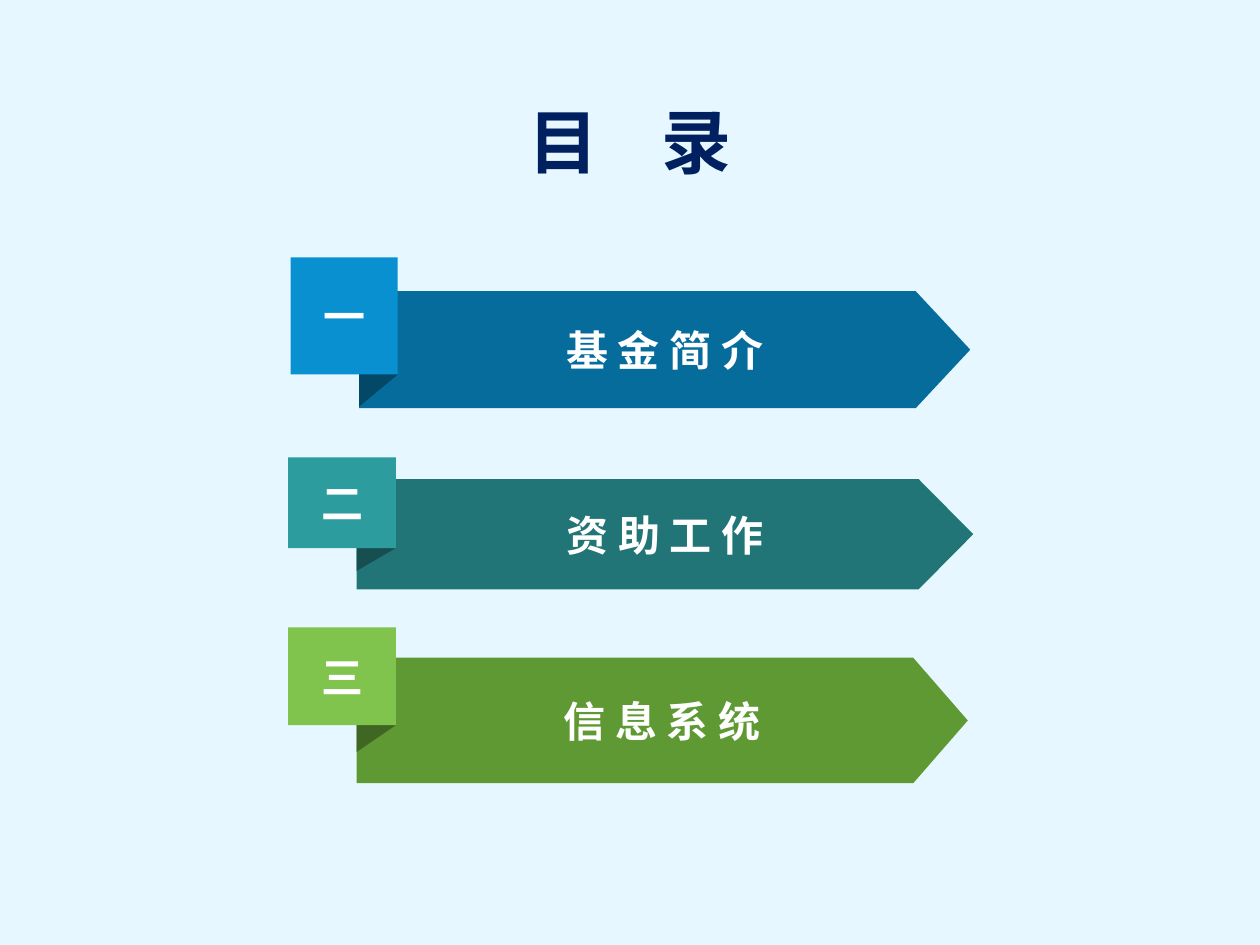
from dataclasses import dataclass

from lxml import etree
from pptx import Presentation
from pptx import util as u
from pptx.dml.color import RGBColor
from pptx.enum import shapes, text
from pptx.oxml.ns import qn


@dataclass(frozen=True)
class Theme:
    font: str = "Noto Sans CJK SC"
    back: str = "E6F7FF"
    title: str = "002060"
    label: str = "FFFFFF"
    big: int = 40
    mid: int = 24
    gap: int = 1350


class Deck:
    def __init__(self, theme):
        self.theme = theme
        self.file = Presentation()
        self.file.slide_width = u.Cm(25.4)
        self.file.slide_height = u.Cm(19.05)
        self.slide = self.file.slides.add_slide(self.file.slide_layouts[6])
        self.paint(self.slide.background.fill, theme.back)

    def paint(self, fill, color):
        fill.solid()
        fill.fore_color.rgb = RGBColor.from_string(color)

    def plain(self, shape, color):
        self.paint(shape.fill, color)
        shape.line.fill.background()
        shape.shadow.inherit = False

    def style(self, para, size, color):
        para.alignment = text.PP_ALIGN.CENTER
        for run in para.runs:
            run.font.name = self.theme.font
            run.font.size = u.Pt(size)
            run.font.bold = True
            run.font.color.rgb = RGBColor.from_string(color)
            east = etree.SubElement(run.font._element, qn("a:ea"))
            east.set("typeface", self.theme.font)

    def label(self, shape, words):
        frame = shape.text_frame
        frame.text = words
        frame.word_wrap = True
        frame.vertical_anchor = text.MSO_ANCHOR.MIDDLE
        self.style(frame.paragraphs[0], self.theme.mid, self.theme.label)

    def title(self, first, last):
        box = self.slide.shapes.add_textbox(0, u.Cm(2.06), u.Cm(25.4), u.Cm(2.16))
        box.text_frame.word_wrap = True
        para = box.text_frame.paragraphs[0]
        para.text = first + " "
        para.add_run().text = last
        para.line_spacing = 0.9
        self.style(para, self.theme.big, self.theme.title)
        para.runs[0].font._element.set("spc", str(self.theme.gap))

    def outline(self, group, points, color):
        start, *rest = [(u.Cm(x), u.Cm(y)) for x, y in points]
        pen = group.shapes.build_freeform(*start)
        pen.add_line_segments(rest)
        shape = pen.convert_to_shape()
        self.plain(shape, color)
        return shape

    def bar(self, group, box, color, words):
        left, top, width, height = box
        right, base = left + width, top + height
        neck = right - 1.1
        points = [(right, top + height / 2), (neck, base), (left, base),
                  (left, top), (neck, top)]
        self.label(self.outline(group, points, color), words)

    def tag(self, group, box, color, words):
        shape = group.shapes.add_shape(
            shapes.MSO_SHAPE.RECTANGLE, *[u.Cm(n) for n in box])
        self.plain(shape, color)
        self.label(shape, words)
        frame = shape.text_frame
        frame.margin_left = frame.margin_right = 0
        frame.margin_top = frame.margin_bottom = 0

    def entry(self, mark, words, tag, bar, fold, colors):
        group = self.slide.shapes.add_group_shape()
        left, top, width, height = tag
        main, dark, light = colors
        edge = bar[0]
        self.bar(group, bar, main, words)
        self.outline(group, [(left + width, top + height),
                             (edge, fold[0]), (edge, fold[1])], dark)
        self.tag(group, tag, light, mark)


ROWS = [
    ("一", "基 金 简 介", (5.86, 5.19, 2.16, 2.36), (7.24, 5.87, 12.32, 2.36),
     (7.09, 8.2), ("066C9C", "044868", "0890D0")),
    ("二", "资 助 工 作", (5.81, 9.22, 2.17, 1.83), (7.19, 9.66, 12.43, 2.22),
     (10.64, 11.51), ("227577", "174E50", "2D9C9F")),
    ("三", "信 息 系 统", (5.81, 12.65, 2.17, 1.97), (7.19, 13.26, 12.32, 2.53),
     (14.25, 15.16), ("5F9933", "3F6622", "80C34D")),
]


def main():
    deck = Deck(Theme())
    for row in ROWS:
        deck.entry(*row)
    deck.title("目", "录")
    deck.file.save("out.pptx")


if __name__ == "__main__":
    main()
